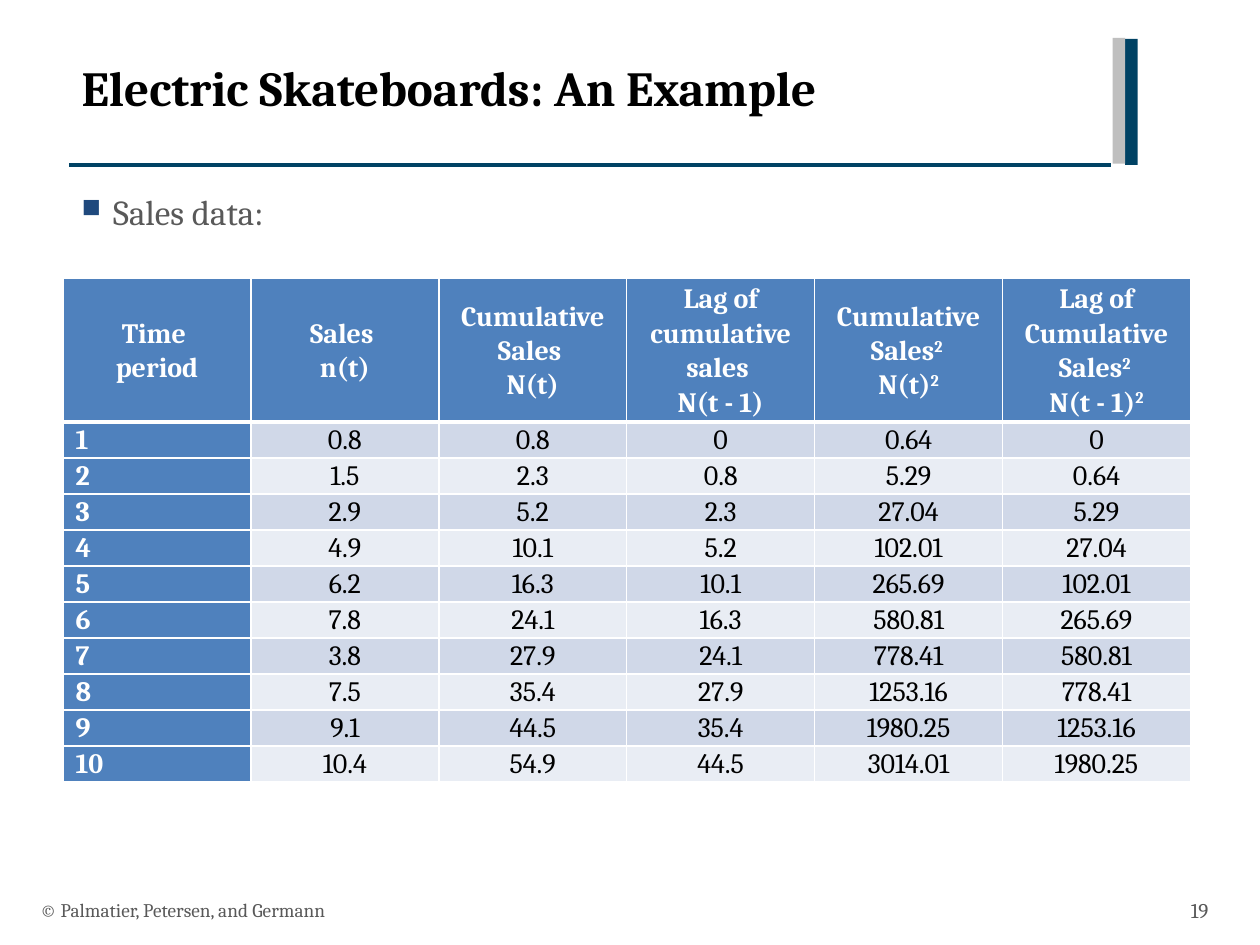
from dataclasses import dataclass
from itertools import accumulate

from lxml import etree
from pptx import Presentation
from pptx import util as u
from pptx.dml import color
from pptx.enum import shapes, text
from pptx.oxml import ns


@dataclass(frozen=True)
class Theme:
    font: str = "Cambria"
    black: str = "000000"
    white: str = "FFFFFF"
    navy: str = "004264"
    grey: str = "595959"
    silver: str = "BFBFBF"
    mark: str = "1F497D"
    blue: str = "4F81BD"
    bands: tuple = ("D0D8E8", "E9EDF4")
    title: int = 28
    body: int = 20
    cell: int = 16
    page: int = 12
    foot: int = 11


T = Theme()
ALIGN, ANCHOR = text.PP_ALIGN, text.MSO_ANCHOR

# "^" marks a raised two
HEADS = [
    ("Time ", "period"),
    ("Sales ", "n(t)"),
    ("Cumulative Sales ", "N(t)"),
    ("Lag of cumulative sales ", "N(t - 1)"),
    ("Cumulative Sales^2 ", "N(t)^2"),
    ("Lag of Cumulative Sales^2 ", "N(t - 1)^2"),
]
SALES = [0.8, 1.5, 2.9, 4.9, 6.2, 7.8, 3.8, 7.5, 9.1, 10.4]


def rgb(hue):
    return color.RGBColor.from_string(hue)


def box(dims):
    return [u.Inches(d) for d in dims]


def put(obj, form):
    for key, val in form.items():
        setattr(obj, key, val)


def sub(root, tag, **attrs):
    node = etree.SubElement(root, ns.qn(tag))
    for key, val in attrs.items():
        node.set(key, str(val))
    return node


def style(font, size, hue, bold=False):
    put(font, {"name": T.font, "size": u.Pt(size), "bold": bold})
    font.color.rgb = rgb(hue)


def bullet(para):
    props = para._p.get_or_add_pPr()
    put_in = u.Inches(0.25)
    props.set("marL", str(put_in))
    props.set("indent", str(-put_in))
    sub(sub(props, "a:buClr"), "a:srgbClr", val=T.mark)
    sub(props, "a:buSzPct", val=75000)
    sub(props, "a:buChar", char="■")


def label(slide, dims, words, size, hue, bold=False, align=ALIGN.LEFT,
          anchor=ANCHOR.TOP, dot=False):
    frame = slide.shapes.add_textbox(*box(dims)).text_frame
    put(frame, {"word_wrap": True, "vertical_anchor": anchor})
    para = frame.paragraphs[0]
    para.alignment = align
    if dot:
        bullet(para)
    run = para.add_run()
    run.text = words
    style(run.font, size, hue, bold)


def bar(slide, dims, hue):
    rect = slide.shapes.add_shape(shapes.MSO_SHAPE.RECTANGLE, *box(dims))
    rect.shadow.inherit = False
    rect.fill.solid()
    rect.fill.fore_color.rgb = rgb(hue)
    rect.line.fill.background()


def rule(slide, ends, hue, width):
    line = slide.shapes.add_connector(
        shapes.MSO_CONNECTOR.STRAIGHT, *box(ends))
    line.line.color.rgb = rgb(hue)
    line.line.width = u.Pt(width)
    sub(line._element.spPr, "a:effectLst")


def edges(cell, top=1, base=1):
    props = cell._tc.get_or_add_tcPr()
    for side, width in {"L": 1, "R": 1, "T": top, "B": base}.items():
        line = sub(props, f"a:ln{side}", w=u.Pt(width))
        sub(sub(line, "a:solidFill"), "a:srgbClr", val=T.white)


def write(para, words, align, hue, bold):
    put(para, {"alignment": align, "line_spacing": 1.07})
    for part, chunk in enumerate(words.split("^")):
        run = para.add_run()
        run.text = chunk
        style(run.font, T.cell, hue, bold)
        if part:
            run._r.get_or_add_rPr().set("baseline", "30000")


def fill(cell, lines, row, col):
    head, key = row == 0, row == 0 or col == 0
    put(cell, {
        "margin_left": u.Inches(0.1), "margin_right": u.Inches(0.1),
        "margin_top": 0, "margin_bottom": 0,
        "vertical_anchor": ANCHOR.MIDDLE if head else ANCHOR.TOP,
    })
    edges(cell, top=3 if row == 1 else 1, base=3 if head else 1)
    cell.fill.solid()
    cell.fill.fore_color.rgb = rgb(T.blue if key else T.bands[(row - 1) % 2])
    align = ALIGN.LEFT if col == 0 and not head else ALIGN.CENTER
    frame = cell.text_frame
    for num, words in enumerate(lines):
        para = frame.add_paragraph() if num else frame.paragraphs[0]
        write(para, words, align, T.white if key else T.black, key)


def data():
    """Work out running totals, their lags and the squares from the sales."""
    sums = list(accumulate(SALES))
    lags = [0] + sums[:-1]
    for time, (sale, now, lag) in enumerate(zip(SALES, sums, lags), 1):
        nums = (time, sale, now, lag, now ** 2, lag ** 2)
        yield [(f"{num:.6g}",) for num in nums]


def grid(slide, dims):
    rows = [HEADS, *data()]
    table = slide.shapes.add_table(len(rows), len(HEADS), *box(dims)).table
    for col in table.columns:
        col.width = u.Inches(dims[2] / len(HEADS))
    for row, items in enumerate(rows):
        table.rows[row].height = u.Inches(0.27 if row else 1.1)
        for col, lines in enumerate(items):
            fill(table.cell(row, col), lines, row, col)


def main():
    deck = Presentation()
    put(deck, {"slide_width": u.Inches(10), "slide_height": u.Inches(7.5)})
    slide = deck.slides.add_slide(deck.slide_layouts[6])

    # Header rule and bars
    rule(slide, (0.55, 1.31, 8.82, 1.31), T.navy, 2)
    bar(slide, (8.93, 0.31, 0.1, 1), T.navy)
    bar(slide, (8.83, 0.3, 0.1, 1), T.silver)

    # Title and lead-in
    label(slide, (0.55, 0.41, 8.26, 1.22), "Electric Skateboards: An Example",
          T.title, T.black, bold=True)
    label(slide, (0.55, 1.46, 9.14, 5.41), "Sales data:", T.body, T.grey,
          dot=True)

    # Footer
    label(slide, (0.22, 7.02, 6.7, 0.4), "© Palmatier, Petersen, and Germann",
          T.foot, T.grey, anchor=ANCHOR.MIDDLE)
    label(slide, (9.08, 7.02, 0.61, 0.4), "19", T.page, T.grey,
          align=ALIGN.RIGHT, anchor=ANCHOR.MIDDLE)

    # Sales table
    grid(slide, (0.5, 2.21, 8.95, 3.8))
    deck.save("out.pptx")


if __name__ == "__main__":
    main()
